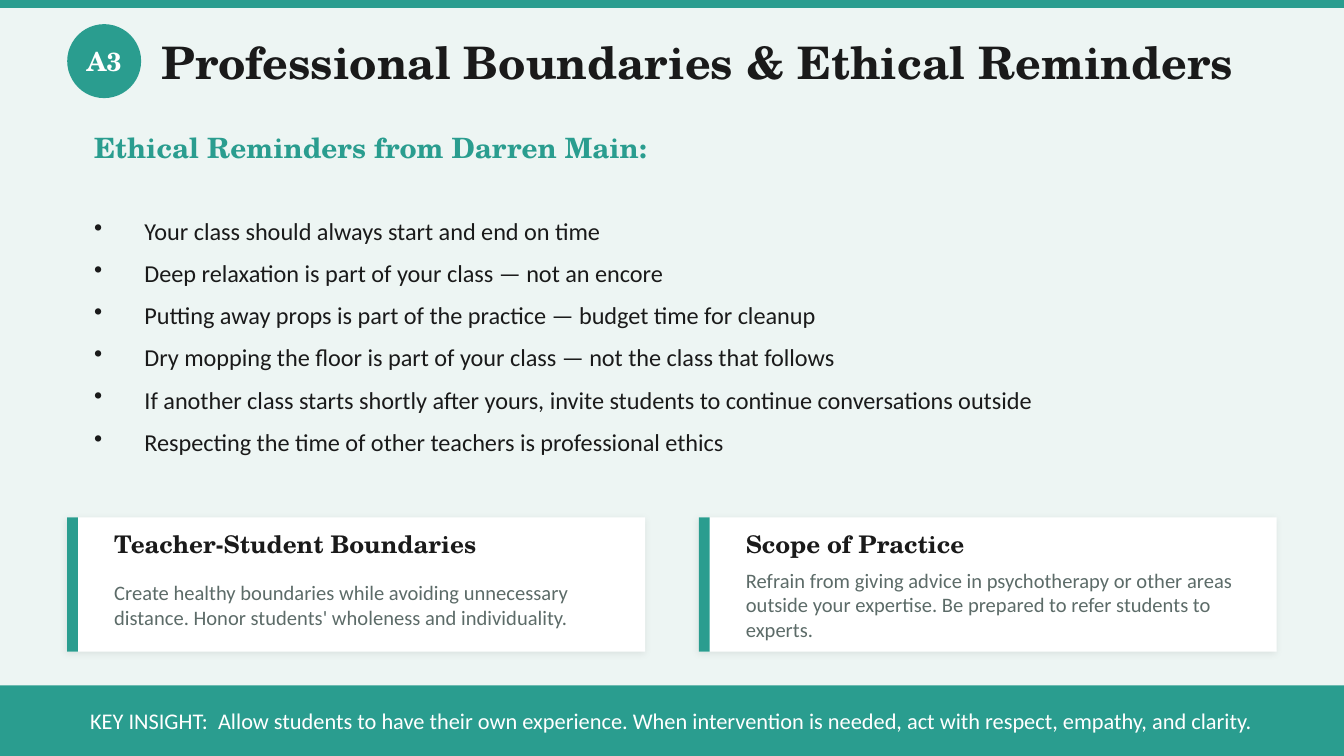
"""Build the slide on professional boundaries and ethical reminders."""
from dataclasses import dataclass

from lxml import etree
from pptx import Presentation
from pptx.dml.color import RGBColor
from pptx.enum.shapes import MSO_SHAPE
from pptx.enum.text import MSO_ANCHOR, MSO_AUTO_SIZE, PP_ALIGN
from pptx.oxml.ns import qn
from pptx.util import Inches, Pt

RECTANGLE, OVAL = MSO_SHAPE.RECTANGLE, MSO_SHAPE.OVAL
MIDDLE, NO_AUTOFIT = MSO_ANCHOR.MIDDLE, MSO_AUTO_SIZE.NONE
LEFT, CENTER = PP_ALIGN.LEFT, PP_ALIGN.CENTER


@dataclass(frozen=True)
class Theme:
    background: str = "EDF5F3"
    accent: str = "2A9D8F"
    ink: str = "1A1A1A"
    muted: str = "5C6B68"
    white: str = "FFFFFF"
    shadow: str = "000000"
    serif: str = "TeX Gyre Schola"
    sans: str = "Calibri"
    title: int = 24
    heading: int = 15
    badge: int = 14
    body: int = 13
    insight: int = 12
    detail: int = 11


THEME = Theme()


def write(shape, *lines, size, color=THEME.ink, font=THEME.sans, bold=False,
          align=LEFT, bullet=None, indent=3 / 8, after=7):
    frame = shape.text_frame
    frame.word_wrap = True
    frame.auto_size = NO_AUTOFIT
    frame.vertical_anchor = MIDDLE
    frame.margin_left = frame.margin_right = frame.margin_top = frame.margin_bottom = 0
    for index, line in enumerate(lines):
        paragraph = frame.add_paragraph() if index else frame.paragraphs[0]
        paragraph.alignment = align
        if bullet:
            paragraph.space_after = Pt(after)
            properties = paragraph._p.get_or_add_pPr()
            properties.set("marL", str(Inches(indent)))
            properties.set("indent", str(-Inches(indent)))
            etree.SubElement(properties, qn("a:buSzPct"), val="100000")
            etree.SubElement(properties, qn("a:buChar"), char=bullet)
        run = paragraph.add_run()
        run.text = line
        run.font.size = Pt(size)
        run.font.name = font
        run.font.bold = bold
        run.font.color.rgb = RGBColor.from_string(color)


def add_block(left, top, width, height, color=THEME.accent, kind=RECTANGLE):
    block = slide.shapes.add_shape(kind, Inches(left), Inches(top), Inches(width), Inches(height))
    block.shadow.inherit = False
    block.fill.solid()
    block.fill.fore_color.rgb = RGBColor.from_string(color)
    block.line.fill.background()
    return block


presentation = Presentation()
presentation.slide_width, presentation.slide_height = Inches(10), Inches(10 * 9 / 16)
slide = presentation.slides.add_slide(presentation.slide_layouts[5])
slide.background.fill.solid()
slide.background.fill.fore_color.rgb = RGBColor.from_string(THEME.background)

add_block(0, 0, 10, 0.06)
badge = add_block(0.5, 0.18, 0.55, 0.55, kind=OVAL)
write(badge, "A3", size=THEME.badge, color=THEME.white, font=THEME.serif, bold=True, align=CENTER)

title = slide.shapes.title
title.left, title.top, title.width, title.height = Inches(1.2), Inches(0.18), Inches(8.3), Inches(0.55)
write(title, "Professional Boundaries & Ethical Reminders",
      size=THEME.title, font=THEME.serif, bold=True)

heading = slide.shapes.add_textbox(Inches(0.7), Inches(0.95), Inches(8.6), Inches(0.3))
write(heading, "Ethical Reminders from Darren Main:",
      size=THEME.heading, color=THEME.accent, font=THEME.serif, bold=True)

reminders = slide.shapes.add_textbox(Inches(0.7), Inches(1.4), Inches(8.6), Inches(2.2))
write(
    reminders,
    "Your class should always start and end on time",
    "Deep relaxation is part of your class — not an encore",
    "Putting away props is part of the practice — budget time for cleanup",
    "Dry mopping the floor is part of your class — not the class that follows",
    "If another class starts shortly after yours, invite students to continue conversations outside",
    "Respecting the time of other teachers is professional ethics",
    size=THEME.body, bullet="•",
)

CARDS = [
    ("Teacher-Student Boundaries",
     "Create healthy boundaries while avoiding unnecessary distance. "
     "Honor students' wholeness and individuality."),
    ("Scope of Practice",
     "Refrain from giving advice in psychotherapy or other areas outside your expertise. "
     "Be prepared to refer students to experts."),
]
CARD_TOP, CARD_WIDTH, CARD_HEIGHT, CARD_GAP = 3.85, 4.3, 1, 0.4

for column, (topic, advice) in enumerate(CARDS):
    card_left = 0.5 + column * (CARD_WIDTH + CARD_GAP)
    card = add_block(card_left, CARD_TOP, CARD_WIDTH, CARD_HEIGHT, THEME.white)
    effects = card._element.spPr.find(qn("a:effectLst"))
    shadow = etree.SubElement(effects, qn("a:outerShdw"), blurRad=str(Pt(4)), dist=str(Pt(1)),
                              dir=str(135 * 60000), algn="bl", rotWithShape="0")
    shadow_color = etree.SubElement(shadow, qn("a:srgbClr"), val=THEME.shadow)
    etree.SubElement(shadow_color, qn("a:alpha"), val="8000")
    add_block(card_left, CARD_TOP, 0.08, CARD_HEIGHT)

    text_left = Inches(card_left + 0.35)
    card_topic = slide.shapes.add_textbox(text_left, Inches(CARD_TOP + 0.05), Inches(3.7), Inches(0.3))
    write(card_topic, topic, size=THEME.body, font=THEME.serif, bold=True)
    card_advice = slide.shapes.add_textbox(text_left, Inches(CARD_TOP + 0.4), Inches(3.7), Inches(0.5))
    write(card_advice, advice, size=THEME.detail, color=THEME.muted)

insight = add_block(0, 5.1, 10, 0.53)
write(insight,
      "KEY INSIGHT:  Allow students to have their own experience. "
      "When intervention is needed, act with respect, empathy, and clarity.",
      size=THEME.insight, color=THEME.white, align=CENTER)

presentation.save("out.pptx")
